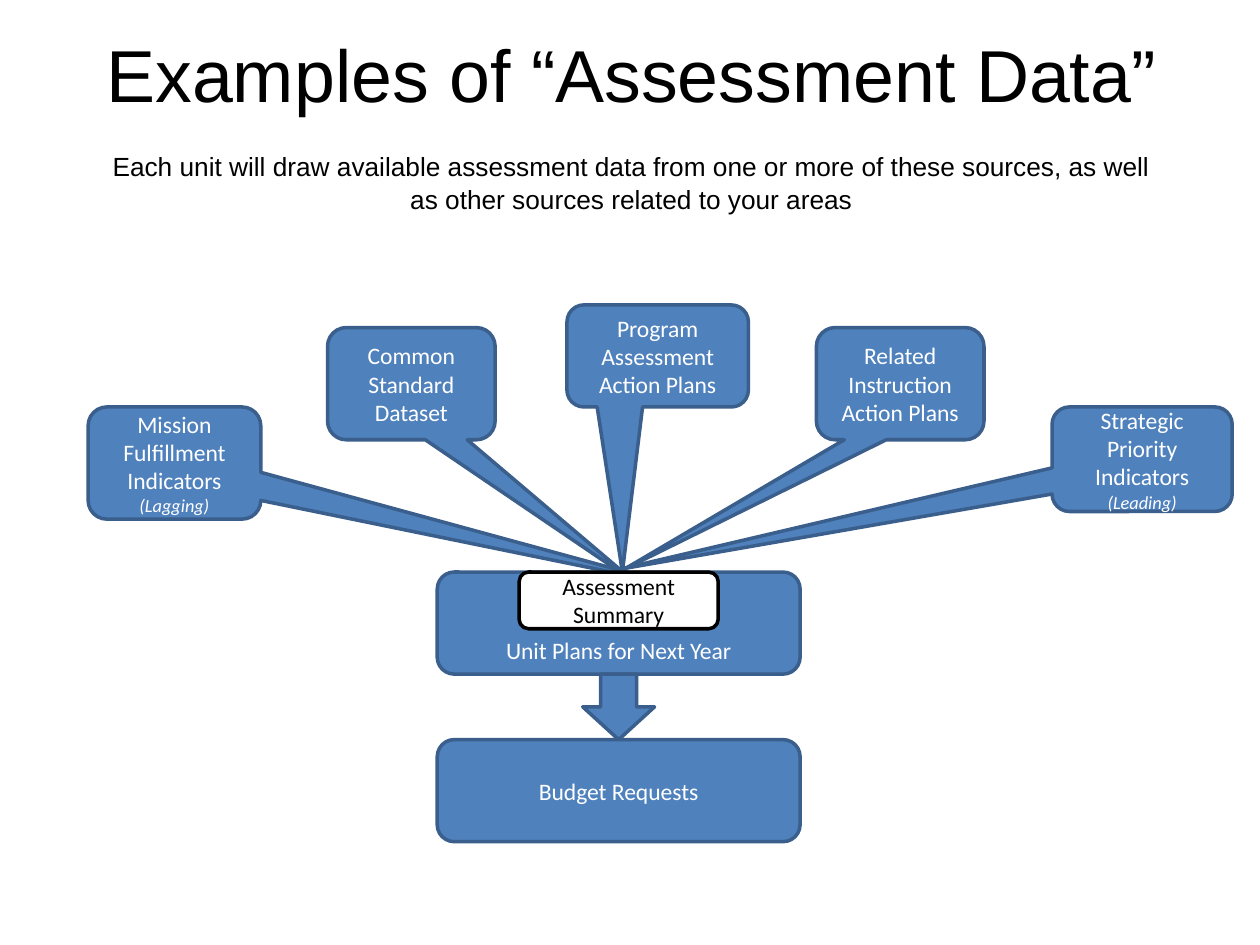
from pptx import Presentation
from pptx.dml.color import RGBColor
from pptx.enum.shapes import MSO_SHAPE
from pptx.enum.text import MSO_ANCHOR, PP_ALIGN
from pptx.util import Inches, Pt

CALLOUT = MSO_SHAPE.ROUNDED_RECTANGULAR_CALLOUT
ROUNDED = MSO_SHAPE.ROUNDED_RECTANGLE
ARROW = MSO_SHAPE.DOWN_ARROW
TOP, MIDDLE, BOTTOM = MSO_ANCHOR.TOP, MSO_ANCHOR.MIDDLE, MSO_ANCHOR.BOTTOM

THEME = {
    "heading_font": "Arial", "body_font": "Calibri",
    "title": 42, "subtitle": 15, "label": 13.5, "note": 10.5,
    "blue": RGBColor(0x4F, 0x81, 0xBD), "edge": RGBColor(0x3A, 0x5F, 0x8C),
    "white": RGBColor(255, 255, 255), "black": RGBColor(0, 0, 0),
    "line": 2,
}

TITLE = "Examples of “Assessment Data”"
SUBTITLE = ("Each unit will draw available assessment data from one or more of "
            "these sources, as well as other sources related to your areas")

# Label lines, italic note, box (left, top, width, height), pointer tip (x, y)
SOURCES = [
    (["Mission Fulfillment Indicators"], "(Lagging)", (0.7, 3.23, 1.37, 0.89), (5.34, 4.64)),
    (["Common Standard Dataset"], None, (2.6, 2.6, 1.33, 0.89), (5.04, 4.62)),
    (["Program Assessment", "Action Plans"], None, (4.5, 2.42, 1.44, 0.81), (4.94, 4.54)),
    (["Related Instruction Action Plans"], None, (6.48, 2.6, 1.33, 0.89), (4.95, 4.52)),
    (["Strategic Priority Indicators"], "(Leading)", (8.35, 3.23, 1.43, 0.83), (4.91, 4.52)),
]

# The plan column: everything is centred on one axis and stacked downwards
AXIS, PLAN_TOP = 4.91, 4.54
PLAN_WIDTH, PLAN_HEIGHT = 2.88, 0.81
ARROW_WIDTH, ARROW_HEIGHT = 0.57, 0.52
SUMMARY_WIDTH, SUMMARY_HEIGHT = 1.58, 0.45


def on_axis(top, width, height):
    return AXIS - width / 2, top, width, height


def add_paragraph(frame, text, size, font, color, italic=False):
    first = frame.paragraphs[0]
    paragraph = frame.add_paragraph() if first.runs else first
    paragraph.alignment = PP_ALIGN.CENTER
    run = paragraph.add_run()
    run.text = text
    run.font.size = Pt(size)
    run.font.name = font
    run.font.italic = italic
    run.font.color.rgb = color
    return paragraph


def set_frame(frame, anchor, side, vertical):
    frame.word_wrap = True
    frame.vertical_anchor = anchor
    frame.margin_left = frame.margin_right = Inches(side)
    frame.margin_top = frame.margin_bottom = Inches(vertical)


def add_box(slide, kind, box, lines=(), note=None, anchor=MIDDLE,
            fill="blue", edge="edge", color="white"):
    shape = slide.shapes.add_shape(kind, *map(Inches, box))
    shape.shadow.inherit = False
    shape.fill.solid()
    shape.fill.fore_color.rgb = THEME[fill]
    shape.line.color.rgb = THEME[edge]
    shape.line.width = Pt(THEME["line"])
    set_frame(shape.text_frame, anchor, 0.08, 0.04)
    for line in lines:
        add_paragraph(shape.text_frame, line, THEME["label"], THEME["body_font"], THEME[color])
    if note:
        add_paragraph(shape.text_frame, note, THEME["note"], THEME["body_font"],
                      THEME[color], italic=True)
    return shape


def point_callout(shape, box, tip):
    """Aim the pointer; its offsets are shares of the box, from its centre."""
    left, top, width, height = box
    shape.adjustments[0] = (tip[0] - left - width / 2) / width
    shape.adjustments[1] = (tip[1] - top - height / 2) / height


def add_heading(slide):
    box = slide.shapes.add_textbox(Inches(0.7), Inches(0.13), Inches(8.62), Inches(1.09))
    frame = box.text_frame
    set_frame(frame, TOP, 0.1, 0.1)
    font, color = THEME["heading_font"], THEME["black"]
    add_paragraph(frame, TITLE, THEME["title"], font, color)
    subtitle = add_paragraph(frame, SUBTITLE, THEME["subtitle"], font, color)
    subtitle.space_before = Pt(18)
    subtitle.line_spacing = 1.05


def main():
    presentation = Presentation()
    presentation.slide_width, presentation.slide_height = Inches(10), Inches(7.5)
    slide = presentation.slides.add_slide(presentation.slide_layouts[6])

    add_heading(slide)
    for lines, note, box, tip in SOURCES:
        point_callout(add_box(slide, CALLOUT, box, lines, note), box, tip)

    arrow_top = PLAN_TOP + PLAN_HEIGHT
    budget_top = arrow_top + ARROW_HEIGHT
    add_box(slide, ROUNDED, on_axis(PLAN_TOP, PLAN_WIDTH, PLAN_HEIGHT),
            ["Unit Plans for Next Year"], anchor=BOTTOM)
    add_box(slide, ARROW, on_axis(arrow_top, ARROW_WIDTH, ARROW_HEIGHT))
    add_box(slide, ROUNDED, on_axis(budget_top, PLAN_WIDTH, PLAN_HEIGHT), ["Budget Requests"])
    add_box(slide, ROUNDED, on_axis(PLAN_TOP, SUMMARY_WIDTH, SUMMARY_HEIGHT),
            ["Assessment Summary"], fill="white", edge="black", color="black")

    presentation.save("out.pptx")


if __name__ == "__main__":
    main()
